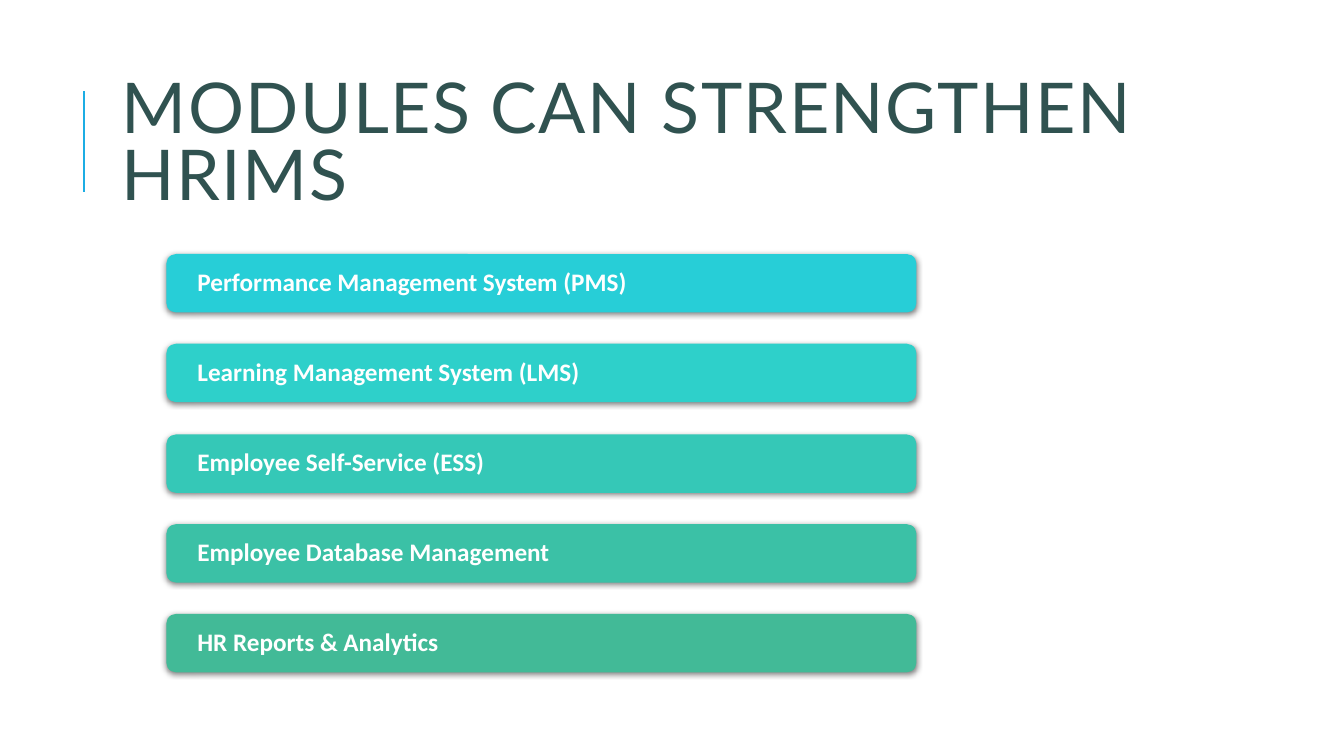
"""Build the slide on modules that can strengthen HRIMS."""

from dataclasses import dataclass

import lxml.etree
import pptx
import pptx.dml.color
import pptx.enum.shapes
import pptx.enum.text
import pptx.oxml.ns
import pptx.shapes.autoshape
import pptx.slide
import pptx.text.text
import pptx.util

PIXEL = 9144
BAR_LEFT, BAR_TOP, BAR_WIDTH, BAR_HEIGHT = 165, 252, 744, 58
BAR_PITCH = 89.3
BAR_INSET = 28

WHITE = pptx.dml.color.RGBColor(0xFF, 0xFF, 0xFF)
BLACK = pptx.dml.color.RGBColor(0x00, 0x00, 0x00)
DARK_TEAL = pptx.dml.color.RGBColor(0x30, 0x52, 0x50)
ACCENT_BLUE = pptx.dml.color.RGBColor(0x1C, 0xAD, 0xE4)
CYAN = pptx.dml.color.RGBColor(0x27, 0xCE, 0xD7)
TURQUOISE = pptx.dml.color.RGBColor(0x2E, 0xD0, 0xCA)
AQUA = pptx.dml.color.RGBColor(0x35, 0xC8, 0xB7)
JADE = pptx.dml.color.RGBColor(0x3B, 0xC1, 0xA6)
GREEN = pptx.dml.color.RGBColor(0x42, 0xBA, 0x97)


@dataclass(frozen=True)
class Module:
    """A module's name and the colour of its bar."""

    name: str
    color: pptx.dml.color.RGBColor


MODULES = [
    Module("Performance Management System (PMS)", CYAN),
    Module("Learning Management System (LMS)", TURQUOISE),
    Module("Employee Self-Service (ESS)", AQUA),
    Module("Employee Database Management", JADE),
    Module("HR Reports & Analytics", GREEN),
]


def px(length: int) -> pptx.util.Emu:
    """Turn pixels into EMU."""
    return pptx.util.Emu(length * PIXEL)


def write_text(
    frame: pptx.text.text.TextFrame,
    text: str,
    *,
    font: str,
    size: int,
    color: pptx.dml.color.RGBColor,
    bold: bool = False,
    line_spacing: float = 1.0,
    letter_spacing: int = 0,
) -> None:
    """Write one left-aligned, vertically centred paragraph."""
    frame.word_wrap = True
    frame.auto_size = pptx.enum.text.MSO_AUTO_SIZE.NONE
    frame.vertical_anchor = pptx.enum.text.MSO_ANCHOR.MIDDLE
    paragraph = frame.paragraphs[0]
    paragraph.alignment = pptx.enum.text.PP_ALIGN.LEFT
    paragraph.line_spacing = line_spacing
    run = paragraph.add_run()
    run.text = text
    run.font.name = font
    run.font.size = pptx.util.Pt(size)
    run.font.bold = bold
    run.font.color.rgb = color
    if letter_spacing:
        run.font._element.set("spc", str(letter_spacing * 100))


def add_shadow(shape: pptx.shapes.autoshape.Shape) -> None:
    """Give a shape a soft black shadow just below it."""
    shape.shadow.inherit = False
    qn = pptx.oxml.ns.qn
    effects = shape._element.spPr.find(qn("a:effectLst"))
    shadow = lxml.etree.SubElement(
        effects,
        qn("a:outerShdw"),
        blurRad=str(pptx.util.Pt(4)),
        dist=str(pptx.util.Pt(1)),
        dir="5400000",
        algn="ctr",
        rotWithShape="0",
    )
    color = lxml.etree.SubElement(shadow, qn("a:srgbClr"), val=str(BLACK))
    lxml.etree.SubElement(color, qn("a:alpha"), val="50000")


def add_title(slide: pptx.slide.Slide) -> None:
    """Place the title and the accent line at its left."""
    title = slide.shapes.title
    title.left, title.top, title.width, title.height = map(px, (111, 64, 1063, 164))
    write_text(
        title.text_frame,
        "MODULES CAN STRENGTHEN HRIMS",
        font="Lato",
        size=50,
        color=DARK_TEAL,
        line_spacing=0.8,
        letter_spacing=1,
    )
    accent = slide.shapes.add_connector(
        pptx.enum.shapes.MSO_CONNECTOR.STRAIGHT, px(83), px(190), px(83), px(90)
    )
    accent.line.color.rgb = ACCENT_BLUE
    accent.line.width = pptx.util.Pt(1.5)
    lxml.etree.SubElement(accent._element.spPr, pptx.oxml.ns.qn("a:effectLst"))


def add_module(slide: pptx.slide.Slide, module: Module, top: int) -> None:
    """Draw one module as a rounded bar with its name."""
    bar = slide.shapes.add_shape(
        pptx.enum.shapes.MSO_SHAPE.ROUNDED_RECTANGLE,
        px(BAR_LEFT), px(top), px(BAR_WIDTH), px(BAR_HEIGHT),
    )
    bar.fill.solid()
    bar.fill.fore_color.rgb = module.color
    bar.line.fill.background()
    add_shadow(bar)
    frame = bar.text_frame
    frame.margin_left = frame.margin_right = px(BAR_INSET)
    frame.margin_top = frame.margin_bottom = 0
    write_text(
        frame, module.name, font="Calibri", size=18, color=WHITE, bold=True, line_spacing=0.9
    )


def main() -> None:
    """Build and save the presentation."""
    presentation = pptx.Presentation()
    presentation.slide_width, presentation.slide_height = px(1333), px(750)
    slide = presentation.slides.add_slide(presentation.slide_layouts[5])
    slide.background.fill.solid()
    slide.background.fill.fore_color.rgb = WHITE
    add_title(slide)
    for index, module in enumerate(MODULES):
        add_module(slide, module, BAR_TOP + round(index * BAR_PITCH))
    presentation.save("out.pptx")


if __name__ == "__main__":
    main()
